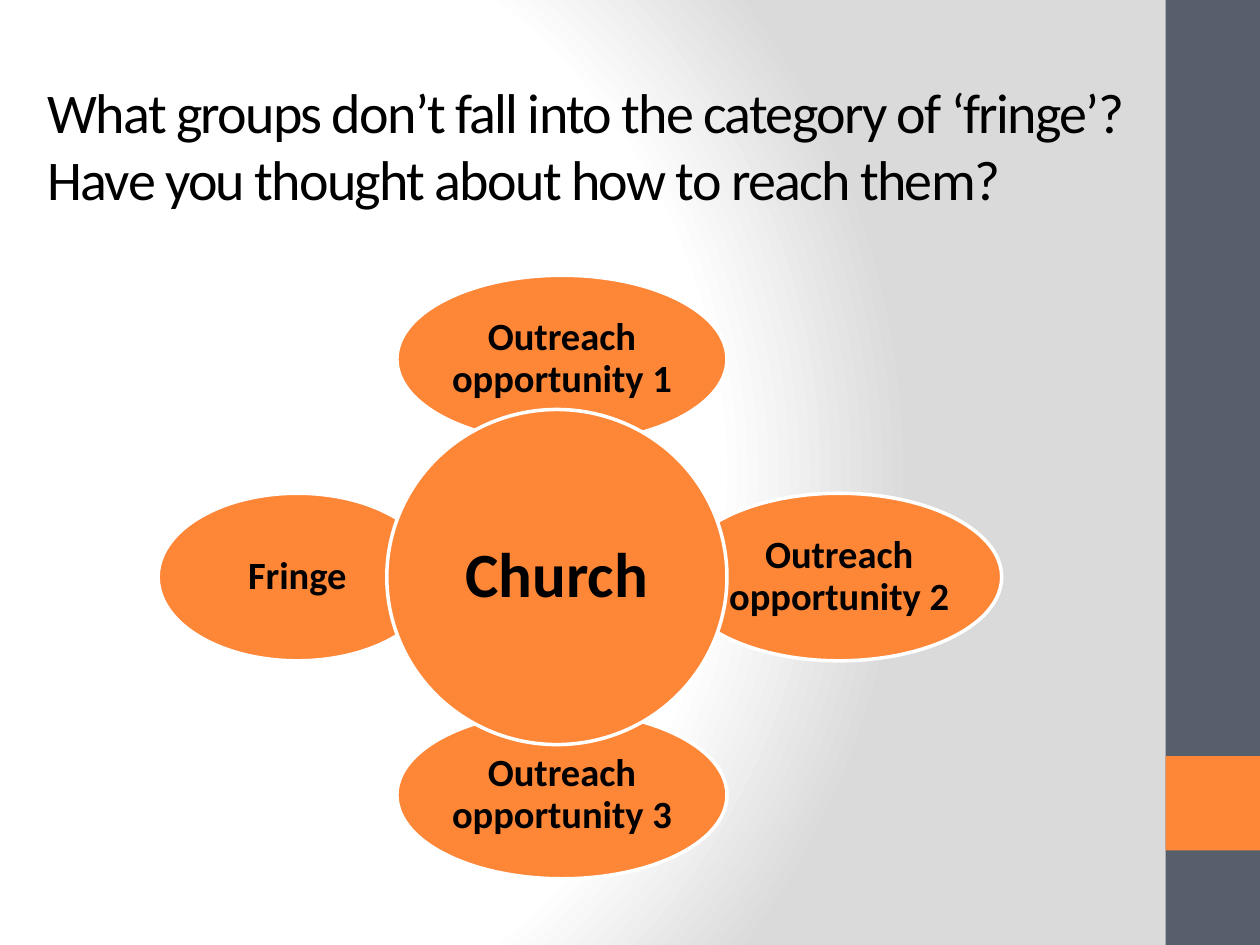
from lxml.etree import SubElement
from pptx import Presentation
from pptx.dml.color import RGBColor
from pptx.enum.shapes import MSO_SHAPE
from pptx.enum.text import MSO_ANCHOR, PP_ALIGN
from pptx.oxml.ns import qn
from pptx.util import Inches, Pt

COLORS = {"white": "FFFFFF", "mist": "DADADA", "slate": "575F6D",
          "orange": "FE8637", "black": "000000"}


class SlideStyle:
    font = "Calibri"

    def __init__(self, page):
        self.page = page

    def color(self, name):
        return RGBColor.from_string(COLORS[name])

    def radial_background(self, stops, focus):
        self.page.background.fill.gradient()
        gradient = self.page.element.find(".//" + qn("a:gradFill"))
        for child in list(gradient):
            gradient.remove(child)
        stop_list = SubElement(gradient, qn("a:gsLst"))
        for percent, name in stops:
            stop = SubElement(stop_list, qn("a:gs"), pos=str(percent * 1000))
            SubElement(stop, qn("a:srgbClr"), val=COLORS[name])
        shade = SubElement(gradient, qn("a:path"), attrib={"path": "circle"})
        sides = {side: str(percent * 1000) for side, percent in focus.items()}
        SubElement(shade, qn("a:fillToRect"), attrib=sides)

    def shape(self, kind, left, top, width, height, fill):
        shape = self.page.shapes.add_shape(
            kind, Inches(left), Inches(top), Inches(width), Inches(height))
        shape.shadow.inherit = False
        shape.fill.solid()
        shape.fill.fore_color.rgb = self.color(fill)
        shape.line.fill.background()
        return shape

    def add_text(self, frame, text, size, bold=False):
        frame.word_wrap = True
        frame.vertical_anchor = MSO_ANCHOR.MIDDLE
        para = frame.paragraphs[0]
        span = para.add_run()
        span.text = text
        span.font.name = self.font
        span.font.size = Pt(size)
        span.font.bold = bold
        span.font.color.rgb = self.color("black")
        return para, span

    def title(self, text, left, top, width, height):
        box = self.page.shapes.add_textbox(
            Inches(left), Inches(top), Inches(width), Inches(height))
        para, span = self.add_text(box.text_frame, text, 32)
        para.alignment = PP_ALIGN.LEFT
        span.font._element.set("spc", "-100")

    def oval(self, text, center_x, center_y, width, height, size=22):
        oval = self.shape(MSO_SHAPE.OVAL, center_x - width / 2,
                          center_y - height / 2, width, height, "orange")
        oval.line.color.rgb = self.color("white")
        oval.line.width = Pt(2)
        frame = oval.text_frame
        frame.margin_left = frame.margin_right = 0
        frame.margin_top = frame.margin_bottom = 0
        para, _ = self.add_text(frame, text, size, bold=True)
        para.alignment = PP_ALIGN.CENTER
        para.line_spacing = 0.9


def main():
    deck = Presentation()
    deck.slide_width, deck.slide_height = Inches(10), Inches(7.5)
    style = SlideStyle(deck.slides.add_slide(deck.slide_layouts[6]))

    # Background and side band
    style.radial_background([(0, "white"), (75, "white"), (100, "mist")],
                            {"l": 20, "t": 50, "r": 100, "b": 50})
    style.shape(MSO_SHAPE.RECTANGLE, 9.25, 0, 0.75, 7.5, "slate")
    style.shape(MSO_SHAPE.RECTANGLE, 9.25, 6, 0.75, 0.75, "orange")

    # Title
    style.title("What groups don’t fall into the category of ‘fringe’? "
                "Have you thought about how to reach them?",
                0.28, 0.29, 8.74, 1.72)

    # Groups around the church, clockwise from the top
    middle, reach, petal_height = 4.58, 1.73, 1.33
    petals = [("Outreach opportunity 1", 4.46, middle - reach, 2.62),
              ("Outreach opportunity 2", 6.66, middle, 2.58),
              ("Outreach opportunity 3", 4.46, middle + reach, 2.62),
              ("Fringe", 2.36, middle, 2.21)]
    for text, center_x, center_y, width in petals:
        style.oval(text, center_x, center_y, width, petal_height)

    # Church at the centre
    style.oval("Church", 4.42, middle, 2.7, 2.66, size=36)

    deck.save("out.pptx")


if __name__ == "__main__":
    main()
